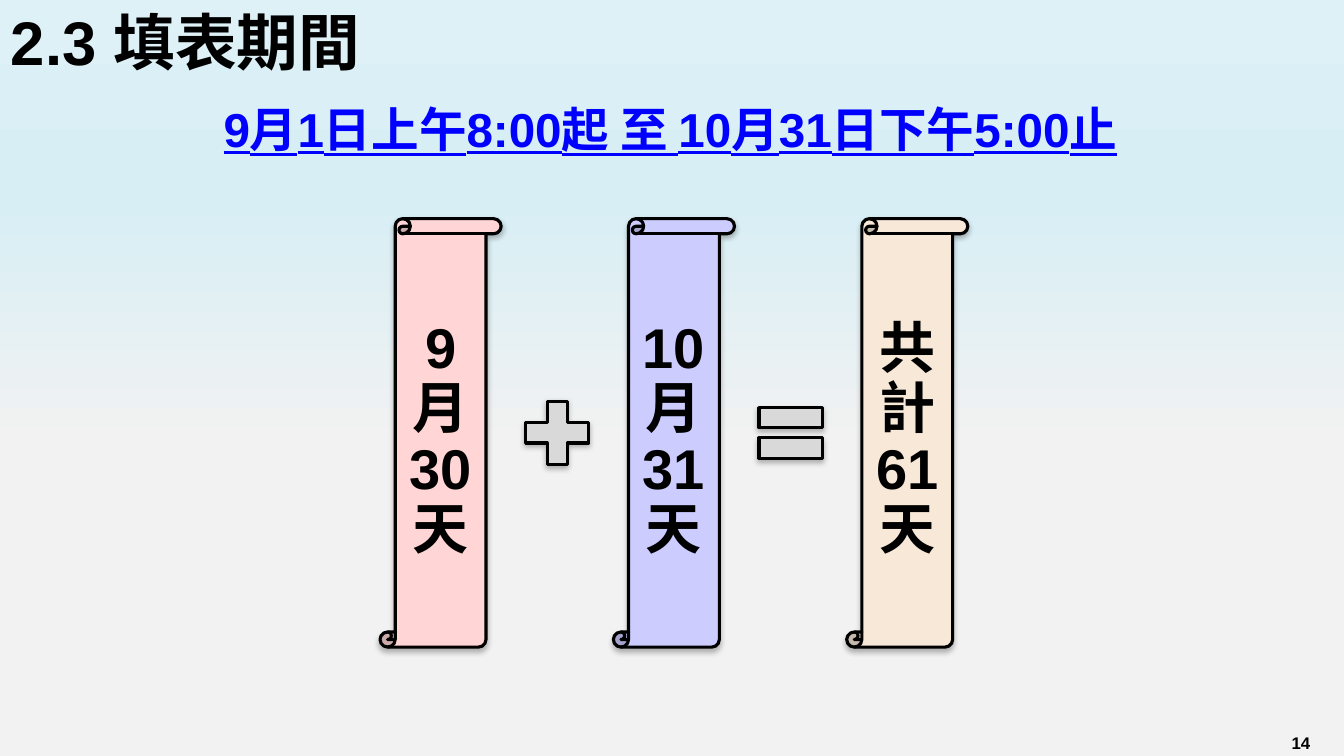
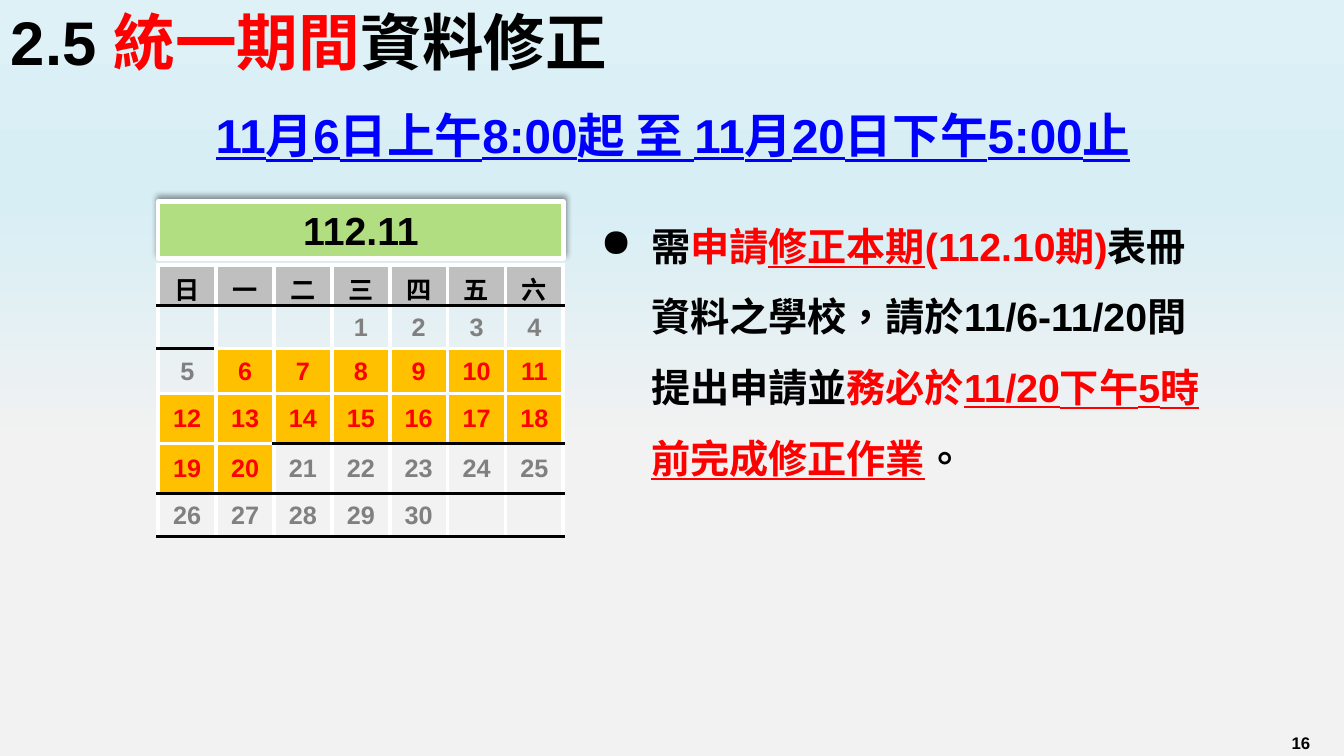
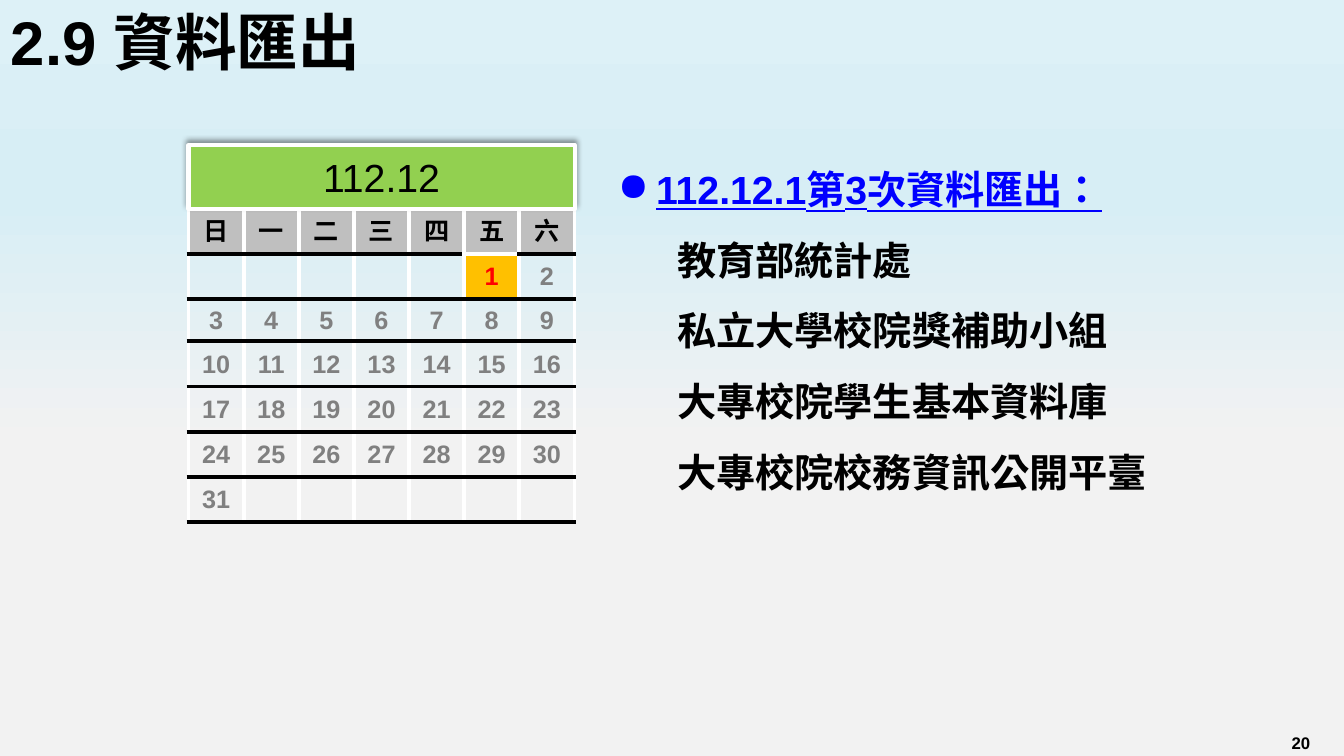
import pptx
import pptx.dml.color
import pptx.enum.shapes
import pptx.enum.text
import pptx.oxml
import pptx.oxml.ns
import pptx.util
from lxml import etree

HUES = {
    "ink": "000000", "red": "FF0000", "blue": "0000FF", "gray": "808080",
    "white": "FFFFFF", "head": "BFBFBF", "gold": "FFC000", "sign": "D9D9D9",
    "pink": "FFD5D5", "lilac": "CCCCFF", "cream": "F7E8D7",
    "lime": "B2DE82", "green": "92D050",
}
SKY = [(41, "F2F2F2"), (74, "D7EEF5"), (83, "DAEFF6"), (100, "DDF1F7")]
LATIN, HAN = "Arial", "Noto Sans CJK SC"
WIDE, HIGH = pptx.util.Inches(13.333), pptx.util.Inches(7.5)
DAYS = "日一二三四五六"
SOFT = (28, 4, 2, 90)
LIFT = (40, 4, 3, 270)

Kind = pptx.enum.shapes.MSO_SHAPE
Align = pptx.enum.text.PP_ALIGN
Anchor = pptx.enum.text.MSO_ANCHOR
Pt = pptx.util.Pt
Inch = pptx.util.Inches
qn = pptx.oxml.ns.qn


def hue(name):
    return pptx.dml.color.RGBColor.from_string(HUES[name])


def node(root, tag, **attrs):
    return etree.SubElement(root, qn(tag), {k: str(v) for k, v in attrs.items()})


def area(x, y, w, h):
    """Turn percentages of the slide into a box of lengths."""
    return tuple(int(n * full / 100) for n, full in zip((x, y, w, h), (WIDE, HIGH) * 2))


def part(box, x, y, w, h):
    """Box given by shares of another box."""
    left, top, wide, high = box
    return (int(left + x * wide), int(top + y * high), int(w * wide), int(h * high))


def write(frame, *runs, size=28, color="ink", bold=True, line=False, font=LATIN,
          align=Align.LEFT, lead=None, mark=None, left=0, hang=0):
    """Add one paragraph; a run is a string or a pair of string and format changes."""
    para = frame.add_paragraph() if frame.text else frame.paragraphs[0]
    para.alignment = align
    if lead:
        para.line_spacing = lead
    if left:
        props = para._p.get_or_add_pPr()
        props.set("marL", str(Inch(left)))
        props.set("indent", str(-Inch(hang)))
        if mark:
            node(props, "a:buChar", char=mark)
    base = {"color": color, "line": line}
    for item in runs:
        text, change = (item, {}) if isinstance(item, str) else item
        look = {**base, **change}
        run = para.add_run()
        run.text = text
        run.font.size, run.font.bold = Pt(size), bold
        run.font.name = font
        run.font.color.rgb = hue(look["color"])
        run.font.underline = look["line"]
        props = run._r.get_or_add_rPr()
        props.set("lang", "zh-TW")
        node(props, "a:ea", typeface=HAN)


def label(slide, box, *runs, anchor=Anchor.TOP, **form):
    frame = slide.shapes.add_textbox(*box).text_frame
    frame.word_wrap = True
    frame.vertical_anchor = anchor
    if runs:
        write(frame, *runs, **form)
    return frame


def block(slide, kind, box, fill, edge="ink", width=2.25, shade=SOFT):
    """Filled shape with an outline and a shadow; gives its text frame."""
    shape = slide.shapes.add_shape(kind, *box)
    shape.fill.solid()
    shape.fill.fore_color.rgb = hue(fill)
    shape.line.color.rgb = hue(edge)
    shape.line.width = Pt(width)
    shape.shadow.inherit = False
    alpha, blur, dist, turn = shade
    cast = node(shape._element.spPr.find(qn("a:effectLst")), "a:outerShdw",
                blurRad=Pt(blur), dist=Pt(dist), dir=turn * 60000, rotWithShape=0)
    node(node(cast, "a:srgbClr", val=HUES["ink"]), "a:alpha", val=alpha * 1000)
    frame = shape.text_frame
    frame.word_wrap = True
    frame.vertical_anchor = Anchor.MIDDLE
    return frame


def paint(deck):
    """Give the master its gradient."""
    fill = deck.slide_master.background.fill
    fill.gradient()
    fill.gradient_angle = 90
    stops = next(deck.slide_master._element.iter(qn("a:gsLst")))
    for stop in list(stops):
        stops.remove(stop)
    for place, shade in SKY:
        node(node(stops, "a:gs", pos=place * 1000), "a:srgbClr", val=shade)


def page(deck, number, *title):
    slide = deck.slides.add_slide(deck.slide_layouts[6])
    label(slide, area(93.6, 96.27, 6.4, 3.73), number, size=12, align=Align.CENTER)
    label(slide, area(0.08, 1.6, 58.2, 8.93), *title, size=44, lead=0.9,
          anchor=Anchor.MIDDLE)
    return slide


def term(slide, box, text):
    """Underlined period heading."""
    label(slide, box, text, size=34, color="blue", line=True, align=Align.CENTER)


def scrolls(slide, box, items, signs):
    """Scrolls at an equal pitch, with a sign centred in each gap."""
    wide, mark = 0.206, 0.146
    step = (1 - wide) / (len(items) - 1)
    tall = mark * box[2] / box[3]
    for i, (text, fill) in enumerate(items):
        frame = block(slide, Kind.VERTICAL_SCROLL, part(box, i * step, 0, wide, 1), fill)
        frame.margin_left = frame.margin_right = frame.margin_bottom = Inch(0.06)
        frame.margin_top = Inch(0.14)
        write(frame, text, size=40, align=Align.CENTER, lead=0.9)
    for i, kind in enumerate(signs):
        mid = i * step + (step + wide) / 2
        block(slide, kind, part(box, mid - mark / 2, 0.5 - tall / 2, mark, tall), "sign")


def edges(cell, **sides):
    props = cell._tc.get_or_add_tcPr()
    for side in "LRTB":
        rule = node(props, "a:ln" + side, w=Pt(3))
        node(node(rule, "a:solidFill"), "a:srgbClr", val=HUES[sides.get(side, "white")])


def month(slide, box, name, first, last, marked, rows, top, fill, bold):
    """Calendar: first is the column of day 1, rows are relative heights."""
    spot = part(box, 0, top, 1, 1 - top)
    grid = slide.shapes.add_table(len(rows), len(DAYS), *spot).table
    grid.first_row = grid.horz_banding = False
    for col in grid.columns:
        col.width = spot[2] // len(DAYS)
    for row, size in zip(grid.rows, rows):
        row.height = int(spot[3] * size / sum(rows))

    def above(r, c):
        """A rule is black unless a marked day stands below it."""
        day = (r - 1) * len(DAYS) + c - first + 1
        return "white" if r == 0 or day in marked else "ink"

    for r in range(len(rows)):
        for c, head in enumerate(DAYS):
            cell = grid.cell(r, c)
            cell.vertical_anchor = Anchor.MIDDLE
            edges(cell, T=above(r, c), B=above(r + 1, c))
            day = (r - 1) * len(DAYS) + c - first + 1
            tone = "head" if r == 0 else "gold" if day in marked else None
            if tone:
                cell.fill.solid()
                cell.fill.fore_color.rgb = hue(tone)
            else:
                cell.fill.background()
            if r == 0:
                write(cell.text_frame, head, size=18, font=HAN, align=Align.CENTER)
                continue
            cell.margin_left = cell.margin_right = cell.margin_top = Inch(0.01)
            cell.margin_bottom = 0
            if 1 <= day <= last:
                write(cell.text_frame, str(day), size=18, align=Align.CENTER,
                      color="red" if day in marked else "gray")
    frame = block(slide, Kind.RECTANGLE, part(box, 0, 0, 1, 0.17), fill,
                  edge="white", width=3, shade=LIFT)
    write(frame, name, bold=bold, align=Align.CENTER)


def period(deck):
    slide = page(deck, "14", "2.3 填表期間")
    term(slide, area(14.85, 12.53, 70.05, 8.93), "9月1日上午8:00起 至 10月31日下午5:00止")
    scrolls(slide, area(28.28, 28.93, 43.73, 56.67),
            [("9月30天", "pink"), ("10月31天", "lilac"), ("共計61天", "cream")],
            [Kind.MATH_PLUS, Kind.MATH_EQUAL])


def fixes(deck):
    red, under = {"color": "red"}, {"color": "red", "line": True}
    slide = page(deck, "16", "2.5 ", ("統一期間", red), "資料修正")
    term(slide, area(13.13, 13.33, 73.88, 8.93), "11月6日上午8:00起 至 11月20日下午5:00止")
    label(slide, area(43.95, 25.6, 46.35, 39.07),
          "需", ("申請", red), ("修正本期", under), ("(112.10期)", red),
          "表冊資料之學校，請於11/6-11/20間提出申請並", ("務必於", red),
          ("11/20下午5時前完成修正作業", under), "。",
          lead=1.5, mark="●", left=0.5, hang=0.5)
    month(slide, area(11.78, 26.67, 30.15, 44.27), "112.11", 3, 30, range(6, 21),
          [40, 43, 45, 50, 50, 43], 0.19, "lime", True)


def export(deck):
    slide = page(deck, "20", "2.9 資料匯出")
    frame = label(slide, area(45.23, 18.13, 41.93, 48.53))
    write(frame, "112.12.1第3次資料匯出：", color="blue", line=True,
          lead=1.5, mark="●", left=0.38, hang=0.38)
    for unit in ("教育部統計處", "私立大學校院獎補助小組",
                 "大專校院學生基本資料庫", "大專校院校務資訊公開平臺"):
        write(frame, unit, lead=1.5, left=0.59)
    month(slide, area(14.03, 19.2, 28.73, 49.87), "112.12", 5, 31, {1},
          [48, 45, 42, 45, 45, 45, 45], 0.16, "green", False)


def main():
    deck = pptx.Presentation()
    deck.slide_width, deck.slide_height = WIDE, HIGH
    paint(deck)
    for build in (period, fixes, export):
        build(deck)
    deck.save("out.pptx")


if __name__ == "__main__":
    main()
